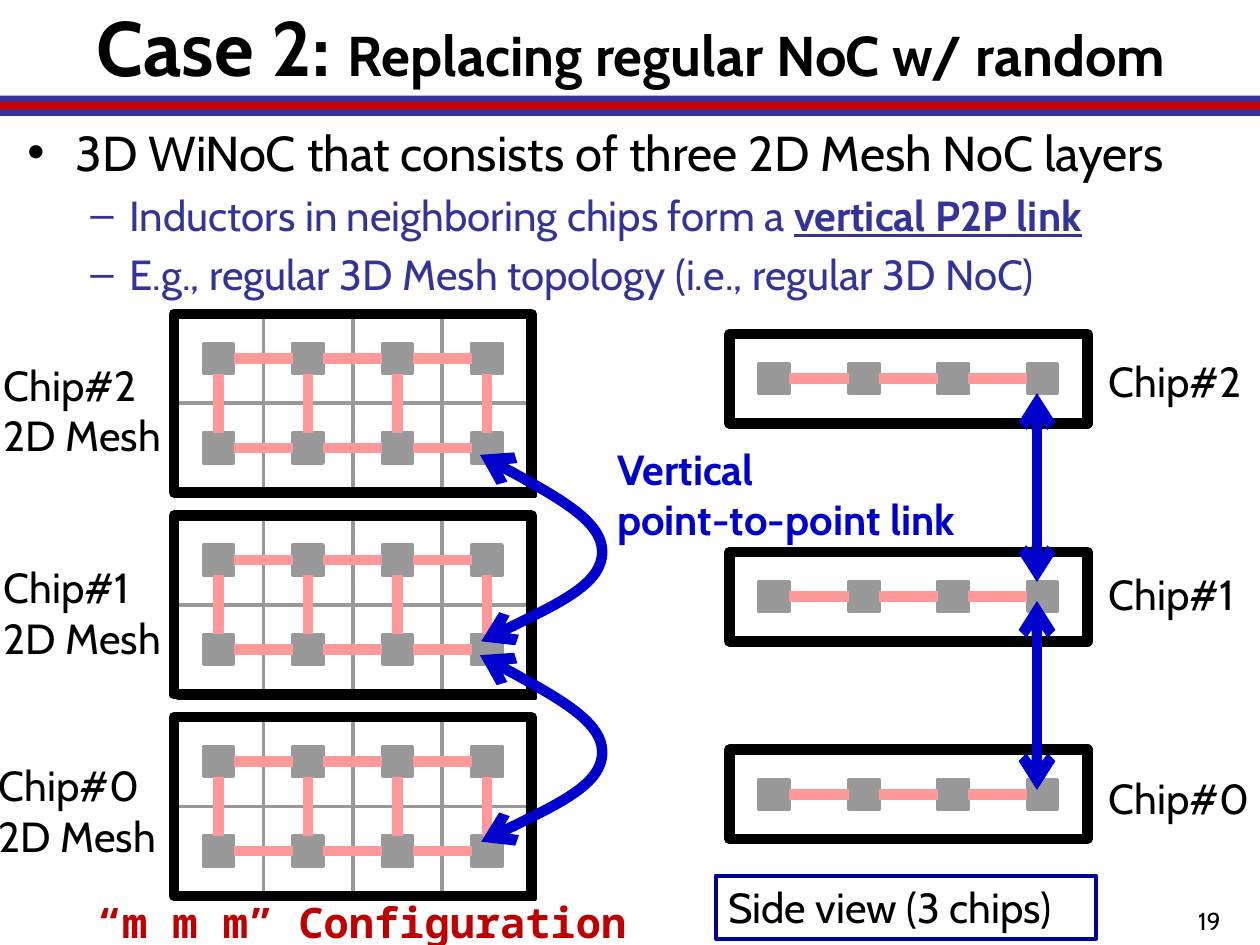
from lxml.etree import SubElement
from pptx import Presentation
from pptx.dml.color import RGBColor
from pptx.enum.shapes import MSO_CONNECTOR, MSO_SHAPE
from pptx.enum.text import MSO_ANCHOR, MSO_AUTO_SIZE, PP_ALIGN
from pptx.oxml.ns import qn
from pptx.util import Inches, Pt

INK = {"black": "000000", "white": "FFFFFF", "navy": "333399", "band": "CC0000",
       "link": "FF0000", "blue": "0000CC", "edge": "000099", "note": "C00000"}
CELL, NODE, COLS = 0.71, 0.24, 4
SHIFT = 0.03
TOP, LEFT, BOTTOM, RIGHT = range(4)


def tint(name):
    return RGBColor.from_string(INK[name])


def rect(shapes, box, fill=None, line=None, width=2, alpha=None):
    shape = shapes.add_shape(MSO_SHAPE.RECTANGLE, *map(Inches, box))
    shape.shadow.inherit = False
    if fill:
        shape.fill.solid()
        shape.fill.fore_color.rgb = tint(fill)
        if alpha:
            color = shape.fill._xPr.find(qn("a:solidFill"))[0]
            SubElement(color, qn("a:alpha"), val=str(alpha * 1000))
    else:
        shape.fill.background()
    if line:
        shape.line.color.rgb = tint(line)
        shape.line.width = Pt(width)
    else:
        shape.line.fill.background()
    return shape


def wire(shapes, start, end, color):
    line = shapes.add_connector(MSO_CONNECTOR.STRAIGHT, *map(Inches, start + end))
    line.line.color.rgb = tint(color)
    line.line.width = Pt(6)
    SubElement(line._element.spPr, qn("a:effectLst"))
    return line


def join(shapes, first, side, second, other):
    line = wire(shapes, (0, 0), (1, 1), "link")
    line.begin_connect(first, side)
    line.end_connect(second, other)


def add_heads(shape):
    """Put an open arrow at both ends of a line."""
    edge = shape.line._get_or_add_ln()
    for tag in ("a:headEnd", "a:tailEnd"):
        SubElement(edge, qn(tag), type="arrow")


def add_run(para, text, size, color="black", bold=False, under=False, face="Cabin"):
    run = para.add_run()
    run.text = text
    font = run.font
    font.name, font.size, font.bold, font.underline = face, Pt(size), bold, under
    font.color.rgb = tint(color)


def write(frame, lines, size=24, **style):
    frame.word_wrap = True
    for i, text in enumerate(lines):
        para = frame.add_paragraph() if i else frame.paragraphs[0]
        para.alignment = PP_ALIGN.LEFT
        add_run(para, text, size, **style)


def label(slide, box, *lines, **style):
    text = slide.shapes.add_textbox(*map(Inches, box))
    write(text.text_frame, lines, **style)


def head(slide, box):
    x, y, w, h = box
    title = slide.shapes.title
    title.left, title.top, title.width, title.height = map(Inches, box)
    frame = title.text_frame
    frame.auto_size = MSO_AUTO_SIZE.NONE
    frame.vertical_anchor = MSO_ANCHOR.MIDDLE
    para = frame.paragraphs[0]
    para.alignment = PP_ALIGN.CENTER
    add_run(para, "Case 2: ", 44, bold=True)
    add_run(para, "Replacing regular NoC w/ random", 32, bold=True)
    base = y + h
    rect(slide.shapes, (0, base, 10, 0.16), "navy")
    rect(slide.shapes, (0, base + 0.05, 10, 0.06), "band")


def points(slide, box):
    """Write the bulleted text."""
    frame = slide.shapes.add_textbox(*map(Inches, box)).text_frame
    frame.word_wrap = True
    items = [
        (0, [("3D WiNoC that consists of three 2D Mesh NoC layers", False)]),
        (1, [("Inductors in neighboring chips form a ", False), ("vertical P2P link", True)]),
        (1, [("E.g., regular 3D Mesh topology (i.e., regular 3D NoC)", False)]),
    ]
    looks = [("•", 0.38, 0.38, 28, "black"), ("–", 0.81, 0.31, 24, "navy")]
    for i, (level, runs) in enumerate(items):
        mark, left, hang, size, color = looks[level]
        para = frame.add_paragraph() if i else frame.paragraphs[0]
        para.level = level
        para.space_before = Pt(size * 0.2)
        props = para._p.get_or_add_pPr()
        props.set("marL", str(Inches(left)))
        props.set("indent", str(-Inches(hang)))
        SubElement(props, qn("a:buFont"), typeface="Arial")
        SubElement(props, qn("a:buChar"), char=mark)
        for text, strong in runs:
            add_run(para, text, size, color, strong, strong)


def add_node(shapes, x, y):
    """Centre a node in the cell at x, y."""
    gap = (CELL - NODE) / 2
    return rect(shapes, (x + gap, y + gap, NODE, NODE), "black", "black")


def mesh(slide, x, y):
    """Draw one chip from above, as a mesh of two rows."""
    shapes = slide.shapes.add_group_shape().shapes
    spots = [[(x + c * CELL, y + r * CELL) for c in range(COLS)] for r in range(2)]
    for row in spots:
        for spot in row:
            rect(shapes, (*spot, CELL, CELL), "white", "black")
    nodes = [[add_node(shapes, *spot) for spot in row] for row in spots]
    for row in nodes:
        for one, two in zip(row, row[1:]):
            join(shapes, one, RIGHT, two, LEFT)
    for one, two in zip(*nodes):
        join(shapes, one, BOTTOM, two, TOP)
    w, h = COLS * CELL, 2 * CELL
    rect(shapes, (x + SHIFT, y + SHIFT, w, h), "white", "black", alpha=60)
    rect(shapes, (x, y, w, h), line="black", width=6)


def layer(slide, x, y):
    """Draw one chip from the side."""
    shapes = slide.shapes.add_group_shape().shapes
    nodes = [add_node(shapes, x + c * CELL, y) for c in range(COLS)]
    for one, two in zip(nodes, nodes[1:]):
        join(shapes, one, RIGHT, two, LEFT)
    w, h = COLS * CELL, CELL
    rect(shapes, (x, y, w, h), line="black", width=6)
    rect(shapes, (x + SHIFT, y + SHIFT, w - 2 * SHIFT, h - 2 * SHIFT),
         "white", "black", alpha=60)


def bend(slide, x, y):
    """Draw a curved arrow between two chips, from x, y down."""
    steps = [(0.49, 0.26), (0.97, 0.53), (0.97, 0.77),
             (0.97, 1.02), (0.49, 1.25), (0.01, 1.48)]
    form = slide.shapes.build_freeform(Inches(x), Inches(y))
    form.add_line_segments([(Inches(x + a), Inches(y + b)) for a, b in steps], close=False)
    curve = form.convert_to_shape()
    curve.shadow.inherit = False
    curve.fill.background()
    curve.line.color.rgb = tint("blue")
    curve.line.width = Pt(6)
    add_heads(curve)
    parts = list(curve._element.iter(qn("a:lnTo")))
    track = parts[0].getparent()
    for i in range(0, len(parts), 3):
        cubic = SubElement(track, qn("a:cubicBezTo"))
        for part in parts[i:i + 3]:
            cubic.append(part[0])
            track.remove(part)


def stack(slide, x, y):
    """Place the three chips seen from above, with their names."""
    pitch = 1.6
    for i, (left, drop) in enumerate([(-0.07, 0.31), (-0.07, 0.32), (-0.11, 0.29)]):
        top = y + i * pitch
        label(slide, (left, top + drop, 2.08, 0.91), f"Chip#{2 - i}", "2D Mesh")
        mesh(slide, x, top)
    for i in range(2):
        bend(slide, x + 2.43, y + 1.12 + i * 1.59)
    label(slide, (x - 0.71, y + 4.58, 4.65, 0.5), "“m m m” Configuration",
          color="note", bold=True, face="Noto Sans Mono")


def side(slide, x, y):
    """Place the three chips seen from the side, with their names."""
    for i, (drop, name) in enumerate([(0, 0.12), (1.73, 1.81), (3.3, 3.43)]):
        layer(slide, x, y + drop)
        label(slide, (x + 2.91, y + name, 1.42, 0.5), f"Chip#{2 - i}")
    for start in (0.47, 2.12):
        line = wire(slide.shapes, (x + 2.44, y + start), (x + 2.44, y + start + 1.5), "blue")
        add_heads(line)
    label(slide, (x - 0.99, y + 0.82, 3.59, 0.91), "Vertical", "point-to-point link",
          color="blue", bold=True)
    box = rect(slide.shapes, (x - 0.11, y + 4.3, 3.02, 0.5), "white", "edge", 2.25)
    write(box.text_frame, ["Side view (3 chips)"])


def main():
    deck = Presentation()
    deck.slide_width, deck.slide_height = Inches(10), Inches(7.5)
    slide = deck.slides.add_slide(deck.slide_layouts[5])
    head(slide, (-0.14, -0.03, 10.3, 0.79))
    points(slide, (0.12, 0.92, 9.96, 1.57))
    stack(slide, 1.38, 2.49)
    side(slide, 5.79, 2.65)
    label(slide, (9.41, 7.14, 0.68, 0.4), "19", size=14)
    deck.save("out.pptx")


if __name__ == "__main__":
    main()
